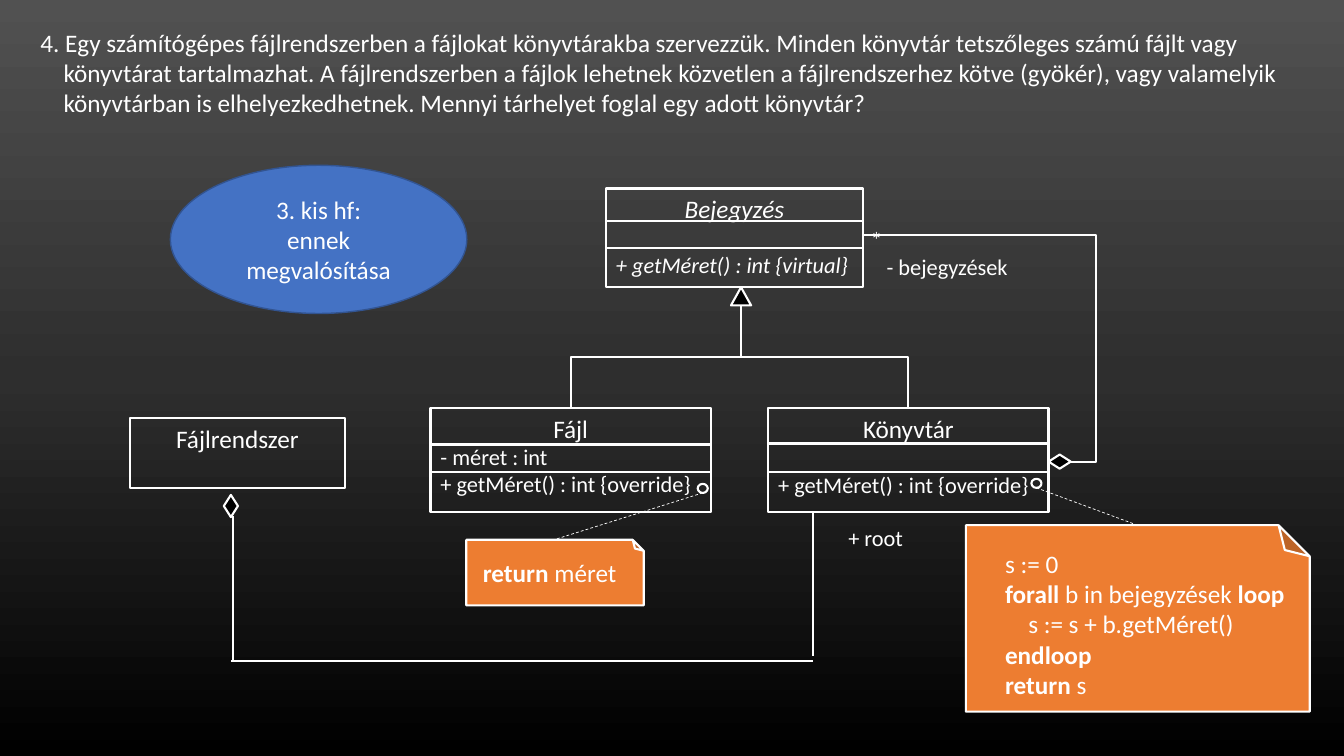
import copy

import pptx
import pptx.dml.color
import pptx.enum.dml
import pptx.enum.shapes
import pptx.enum.text
import pptx.oxml
import pptx.oxml.ns
import pptx.util
from dataclasses import dataclass

SHAPE = pptx.enum.shapes.MSO_SHAPE
LINK = pptx.enum.shapes.MSO_CONNECTOR
ALIGN = pptx.enum.text.PP_ALIGN
ANCHOR = pptx.enum.text.MSO_ANCHOR
DASH = pptx.enum.dml.MSO_LINE.DASH
Pt = pptx.util.Pt


@dataclass
class Theme:
    font: str = "Calibri"
    ink: str = "FFFFFF"
    tip: str = "000000"
    note: str = "ED7D31"
    task: str = "4472C4"
    edge: str = "325491"
    back: tuple = ((0, "515151"), (0.5, "2E2E2E"), (1, "000000"))
    big: int = 18
    small: int = 16
    star: int = 28
    line: float = 1.5
    thin: float = 0.5


def px(n):
    """100 px to the inch."""
    return pptx.util.Emu(int(n * 9144))


def rgb(code):
    return pptx.dml.color.RGBColor.from_string(code)


def put(item, vals):
    for name, val in vals.items():
        setattr(item, name, val)


class Board:
    def __init__(self, deck, theme):
        self.theme = theme
        self.slide = deck.slides.add_slide(deck.slide_layouts[5])
        self.shapes = self.slide.shapes

    def back(self):
        fill = self.slide.background.fill
        fill.gradient()
        fill.gradient_angle = 270
        stops = self.slide._element.xpath(".//a:gsLst")[0]
        stops.insert(1, copy.deepcopy(stops[0]))
        for stop, (pos, code) in zip(fill.gradient_stops, self.theme.back):
            stop.position = pos
            stop.color.rgb = rgb(code)

    def letter(self, frame, rows, size=None, align=ALIGN.LEFT, anchor=ANCHOR.TOP, wrap=True):
        """Each row is text, or text and a dict; ** marks bold, a newline breaks."""
        put(frame, {"word_wrap": wrap, "vertical_anchor": anchor,
                    "auto_size": pptx.enum.text.MSO_AUTO_SIZE.NONE,
                    "margin_left": px(10), "margin_right": px(10),
                    "margin_top": px(5), "margin_bottom": px(5)})
        for i, row in enumerate(rows):
            text, opts = row if isinstance(row, tuple) else (row, {})
            para = frame.paragraphs[0] if i == 0 else frame.add_paragraph()
            put(para, {"alignment": opts.get("align", align),
                       "space_before": Pt(opts.get("gap", 0))})
            if "indent" in opts:
                para._p.get_or_add_pPr().set("marL", str(px(opts["indent"])))
            for j, part in enumerate(text.split("**")):
                for k, line in enumerate(part.split("\n")):
                    if k:
                        para.add_line_break()
                    if not line:
                        continue
                    run = para.add_run()
                    run.text = line
                    put(run.font, {"name": self.theme.font, "bold": j % 2 == 1,
                                   "size": Pt(opts.get("size", size or self.theme.big)),
                                   "italic": opts.get("italic", False)})
                    run.font.color.rgb = rgb(self.theme.ink)
                    if "base" in opts:
                        run._r.get_or_add_rPr().set("baseline", str(opts["base"]))

    def title(self, box, rows):
        item = self.shapes.title
        put(item, dict(zip(("left", "top", "width", "height"), map(px, box))))
        self.letter(item.text_frame, rows)

    def text(self, box, rows, fill=None, **style):
        item = self.shapes.add_textbox(*map(px, box))
        if fill:
            item.fill.solid()
            item.fill.fore_color.rgb = rgb(fill)
        self.letter(item.text_frame, rows, **style)

    def shape(self, kind, box, fill=None, edge=None, width=None, turn=0, rows=(), **style):
        item = self.shapes.add_shape(kind, *map(px, box))
        item.shadow.inherit = False
        item.rotation = turn
        if fill:
            item.fill.solid()
            item.fill.fore_color.rgb = rgb(fill)
        else:
            item.fill.background()
        item.line.color.rgb = rgb(edge or self.theme.ink)
        item.line.width = Pt(width or self.theme.line)
        if rows:
            self.letter(item.text_frame, rows, **style)

    def line(self, ends, kind=LINK.STRAIGHT, width=None, dash=None):
        item = self.shapes.add_connector(kind, *map(px, ends))
        item.line.color.rgb = rgb(self.theme.ink)
        put(item.line, {"width": Pt(width or self.theme.line), "dash_style": dash})
        props = item._element.spPr
        props.append(pptx.oxml.parse_xml(
            "<a:effectLst %s/>" % pptx.oxml.ns.nsdecls("a")))
        return props

    def rise(self, x1, y1, x2, y2):
        """Elbow that leaves and arrives vertically: a sideways one turned by 270°."""
        midx, midy = (x1 + x2) / 2, (y1 + y2) / 2
        dx, dy = (x2 - x1) / 2, (y2 - y1) / 2
        ends = midx + dy, midy - dx, midx - dy, midy + dx
        self.line(ends, LINK.ELBOW).xfrm.set("rot", str(270 * 60000))

    def loop(self, ends, bend):
        props = self.line(ends, LINK.ELBOW)
        props.xpath("./a:prstGeom/a:avLst")[0].append(pptx.oxml.parse_xml(
            '<a:gd %s name="adj1" fmla="val %d"/>' % (pptx.oxml.ns.nsdecls("a"), bend)))

    def entity(self, box, name, rows=(), split=None, italic=False):
        """Class box; split is the top and height of its attribute part."""
        head = (name, {"align": ALIGN.CENTER, "size": self.theme.big, "italic": italic})
        self.shape(SHAPE.RECTANGLE, box, rows=[head, *rows], size=self.theme.small)
        if split:
            self.shape(SHAPE.RECTANGLE, (box[0], split[0], box[2], split[1]))


def main():
    theme = Theme()
    deck = pptx.Presentation()
    put(deck, {"slide_width": px(1333), "slide_height": px(750)})
    board = Board(deck, theme)
    board.back()

    # Task text
    board.title((30, 22, 1266, 101), [
        "4. Egy számítógépes fájlrendszerben a fájlokat könyvtárakba szervezzük. "
        "Minden könyvtár tetszőleges számú fájlt vagy",
        ("könyvtárat tartalmazhat. A fájlrendszerben a fájlok lehetnek közvetlen a "
         "fájlrendszerhez kötve (gyökér), vagy valamelyik", {"indent": 23}),
        ("könyvtárban is elhelyezkedhetnek. Mennyi tárhelyet foglal egy adott könyvtár?",
         {"indent": 23})])
    board.shape(SHAPE.OVAL, (169, 164, 294, 147), theme.task, theme.edge, 1,
                rows=["3. kis hf:\nennek megvalósítása"],
                align=ALIGN.CENTER, anchor=ANCHOR.MIDDLE)

    # Classes
    skip = 19.5
    board.entity((129, 415, 213, 69), "Fájlrendszer")
    board.entity((601, 187, 255, 98), "Bejegyzés",
                 [("+ getMéret() : int {virtual}", {"gap": skip, "italic": True})],
                 (219, 27), True)
    board.entity((427, 405, 278, 103), "Fájl",
                 ["- méret : int", "+ getMéret() : int {override}"], (441, 27))
    board.entity((762, 405, 278, 103), "Könyvtár",
                 [("+ getMéret() : int {override}", {"gap": skip})], (440, 28))

    # Inheritance
    for x in (566, 901):
        board.rise(x, 405, 735, 303)
    board.shape(SHAPE.ISOSCELES_TRIANGLE, (725, 285, 20, 18), theme.tip)

    # Aggregations
    board.loop((1062, 458, 856, 233), -12100)
    for ends in ((229, 656, 806, 656), (231, 512, 231, 655), (806, 508, 806, 651)):
        board.line(ends)
    for x, y, turn in ((1040, 451, 0), (218, 495, 90)):
        board.shape(SHAPE.DIAMOND, (x, y, 22, 14), theme.tip, turn=turn)
    board.text((853, 199, 33, 42), [("*", {"base": -10000})], size=theme.star,
               align=ALIGN.CENTER, wrap=False)
    for box, label in (((805, 515, 127, 37), "+ root"),
                       ((868, 246, 143, 37), "- bejegyzések")):
        board.text(box, [label], size=theme.small, align=ALIGN.CENTER)

    # Method notes
    for box in ((1036, 443, 185, 341), (518, 480, 65, 176)):
        board.shape(SHAPE.FOLDED_CORNER, box, theme.note, turn=270)
    for x, y, endx, endy in ((1023, 475, 1128, 521), (692, 480, 551, 535)):
        board.shape(SHAPE.OVAL, (x, y, 10, 9))
        board.line((x + 5, y + 9, endx, endy), width=theme.thin, dash=DASH)
    board.text((987, 539, 309, 162), [
        "s := 0", "**forall** b in bejegyzések **loop**",
        ("s := s + b.getMéret()", {"indent": 23}), "**endloop**", "**return** s"])
    board.text((469, 548, 165, 40), ["**return** méret"], theme.note)

    deck.save("out.pptx")


if __name__ == "__main__":
    main()
